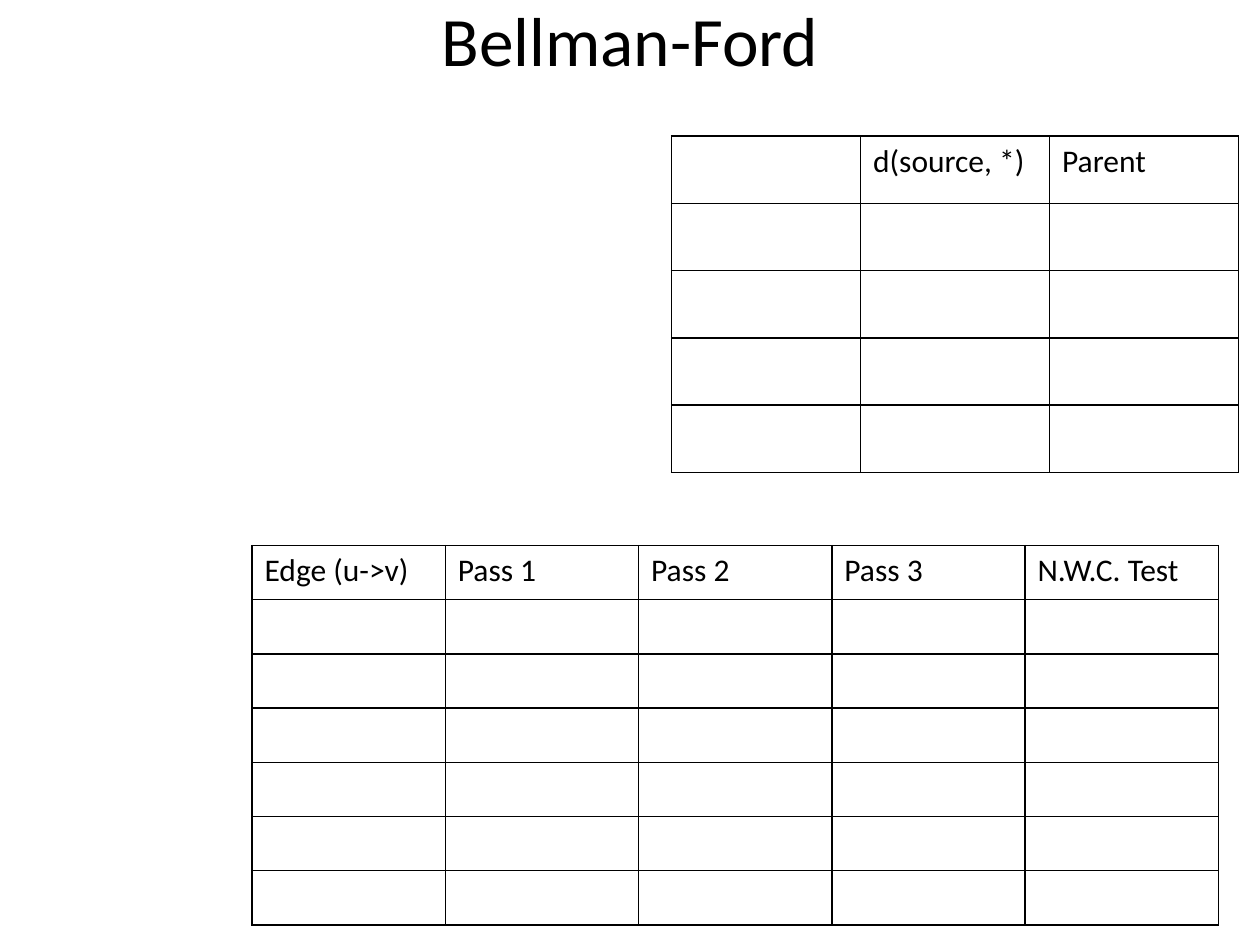
import pptx
import pptx.util
import pptx.dml.color
import pptx.enum.text
import pptx.oxml
import pptx.oxml.ns
from pptx.util import Inches

FONT = "Calibri"
BLACK = "000000"


def color(value):
    return pptx.dml.color.RGBColor.from_string(value)


def set_font(para, size):
    para.font.name = FONT
    para.font.size = pptx.util.Pt(size)
    para.font.color.rgb = color(BLACK)


def add_title(page, text):
    title = page.shapes.title
    title.left, title.top = Inches(0.5), Inches(0)
    title.width, title.height = Inches(9), Inches(0.62)
    frame = title.text_frame
    frame.text = text
    frame.margin_top = frame.margin_bottom = 0
    frame.auto_size = pptx.enum.text.MSO_AUTO_SIZE.NONE
    frame.vertical_anchor = pptx.enum.text.MSO_ANCHOR.MIDDLE
    para = frame.paragraphs[0]
    para.alignment = pptx.enum.text.PP_ALIGN.CENTER
    set_font(para, 39.6)


def add_borders(cell):
    properties = cell._tc.get_or_add_tcPr()
    for position, side in enumerate(("lnL", "lnR", "lnT", "lnB")):
        border = pptx.oxml.parse_xml(
            f'<a:{side} {pptx.oxml.ns.nsdecls("a")} w="{pptx.util.Pt(1)}">'
            f'<a:solidFill><a:srgbClr val="{BLACK}"/></a:solidFill></a:{side}>'
        )
        properties.insert(position, border)


def add_grid(page, headings, row_count, left, top, width, height):
    frame = page.shapes.add_table(
        row_count, len(headings),
        Inches(left), Inches(top), Inches(width), Inches(height),
    )
    table = frame.table
    table.first_row = table.horz_banding = False
    for column, heading in enumerate(headings):
        table.cell(0, column).text = heading
    for cell in table.iter_cells():
        cell.fill.background()
        add_borders(cell)
        set_font(cell.text_frame.paragraphs[0], 18)


def main():
    deck = pptx.Presentation()
    deck.slide_width, deck.slide_height = Inches(10), Inches(7.5)
    page = deck.slides.add_slide(deck.slide_layouts[5])
    add_title(page, "Bellman-Ford")
    add_grid(page, ["", "d(source, *)", "Parent"], 5, 5.33, 1.08, 4.5, 2.67)
    passes = [f"Pass {number}" for number in range(1, 4)]
    add_grid(page, ["Edge (u->v)", *passes, "N.W.C. Test"], 7, 2, 4.33, 7.67, 3.01)
    deck.save("out.pptx")


if __name__ == "__main__":
    main()
